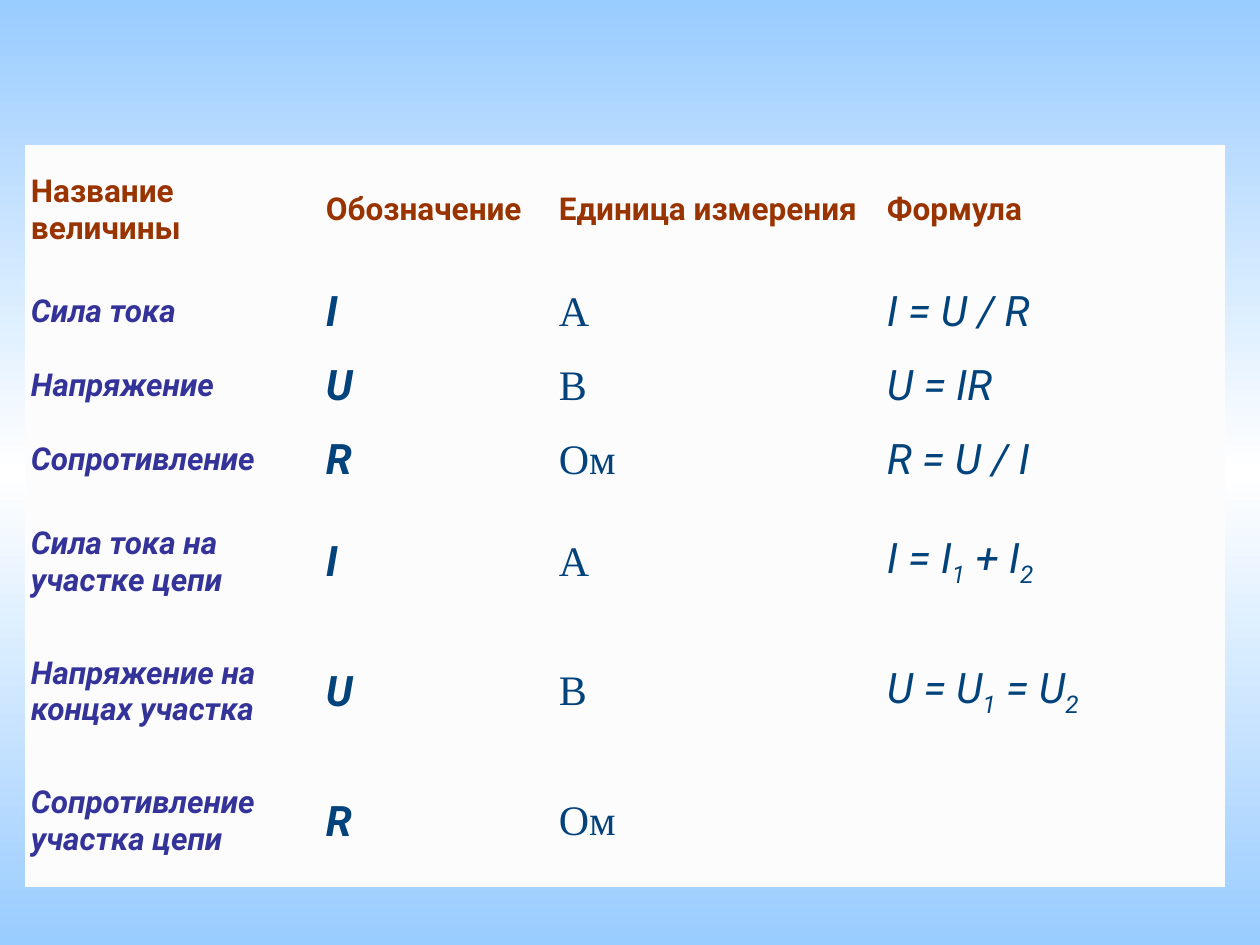
from copy import deepcopy
from dataclasses import dataclass

from pptx import Presentation
from pptx.dml.color import RGBColor
from pptx.enum.text import MSO_ANCHOR
from pptx.oxml.ns import qn
from pptx.util import Emu, Pt

PX = 914400 / 126
SKY = RGBColor(0x99, 0xCC, 0xFF)
WHITE = RGBColor(0xFF, 0xFF, 0xFF)
PAPER = RGBColor(0xFC, 0xFC, 0xFC)
BROWN = RGBColor(0x99, 0x33, 0x00)
INDIGO = RGBColor(0x33, 0x33, 0x99)
NAVY = RGBColor(0x03, 0x43, 0x7C)
NO_STYLE = "{2D5ABB26-0587-4C30-8999-92F81FD0307C}"

COLUMN_WIDTHS = [295, 233, 328, 344]
TALL, SHORT = 130, 74
ROW_HEIGHTS = [TALL] + [SHORT] * 3 + [TALL] * 3

# Parts between bars are subscripts.
ROWS = [
    ["Название величины", "Обозначение", "Единица измерения", "Формула"],
    ["Сила тока", "I", "А", "I = U / R"],
    ["Напряжение", "U", "В", "U = IR"],
    ["Сопротивление", "R", "Ом", "R = U / I"],
    ["Сила тока на участке цепи", "I", "A", "I = I|1| + I|2|"],
    ["Напряжение на концах участка", "U", "B", "U = U|1| = U|2|"],
    ["Сопротивление участка цепи", "R", "Ом", ""],
]


def px(length):
    return Emu(round(length * PX))


@dataclass
class TextStyle:
    size: int
    color: RGBColor
    bold: bool = False
    italic: bool = False
    name: str = "Roboto"

    def apply(self, font):
        font.name = self.name
        font.size = Pt(self.size)
        font.bold = self.bold
        font.italic = self.italic
        font.color.rgb = self.color


HEADING = TextStyle(18, BROWN, bold=True)
COLUMN_STYLES = [
    TextStyle(18, INDIGO, bold=True, italic=True),
    TextStyle(24, NAVY, bold=True, italic=True),
    TextStyle(24, NAVY, name="Times New Roman"),
    TextStyle(24, NAVY, italic=True),
]


class SlideBuilder:
    def __init__(self, page, inset=6):
        self.page = page
        self.inset = px(inset)

    def background(self, colors):
        """Fill the page with a vertical gradient of evenly spaced colours."""
        fill = self.page.background.fill
        fill.gradient()
        fill.gradient_angle = 90
        stop_list = next(self.page.element.iter(qn("a:gsLst")))
        while len(stop_list) < len(colors):
            stop_list.append(deepcopy(stop_list[-1]))
        for index, (stop, color) in enumerate(zip(fill.gradient_stops, colors)):
            stop.position = index / (len(colors) - 1)
            stop.color.rgb = color

    def cell(self, cell, text, style):
        cell.fill.solid()
        cell.fill.fore_color.rgb = PAPER
        cell.vertical_anchor = MSO_ANCHOR.MIDDLE
        cell.margin_left = cell.margin_right = self.inset
        cell.margin_top = cell.margin_bottom = self.inset
        para = cell.text_frame.paragraphs[0]
        style.apply(para.font)
        for index, part in enumerate(text.split("|")):
            if part:
                span = para.add_run()
                span.text = part
                if index % 2:
                    span.font._element.set("baseline", "-25000")

    def table(self, left, top, widths, heights, rows):
        frame = self.page.shapes.add_table(
            len(heights), len(widths), px(left), px(top), px(sum(widths)), px(sum(heights)))
        table = frame.table
        table.first_row = table.horz_banding = False
        next(frame._element.iter(qn("a:tableStyleId"))).text = NO_STYLE
        for column, width in zip(table.columns, widths):
            column.width = px(width)
        for row, height in zip(table.rows, heights):
            row.height = px(height)
        for row_index, texts in enumerate(rows):
            for column_index, text in enumerate(texts):
                style = COLUMN_STYLES[column_index] if row_index else HEADING
                self.cell(table.cell(row_index, column_index), text, style)


def main():
    deck = Presentation()
    deck.slide_width, deck.slide_height = px(1260), px(945)
    builder = SlideBuilder(deck.slides.add_slide(deck.slide_layouts[6]))
    builder.background([SKY, WHITE, SKY])
    builder.table(25, 145, COLUMN_WIDTHS, ROW_HEIGHTS, ROWS)
    deck.save("out.pptx")


if __name__ == "__main__":
    main()
